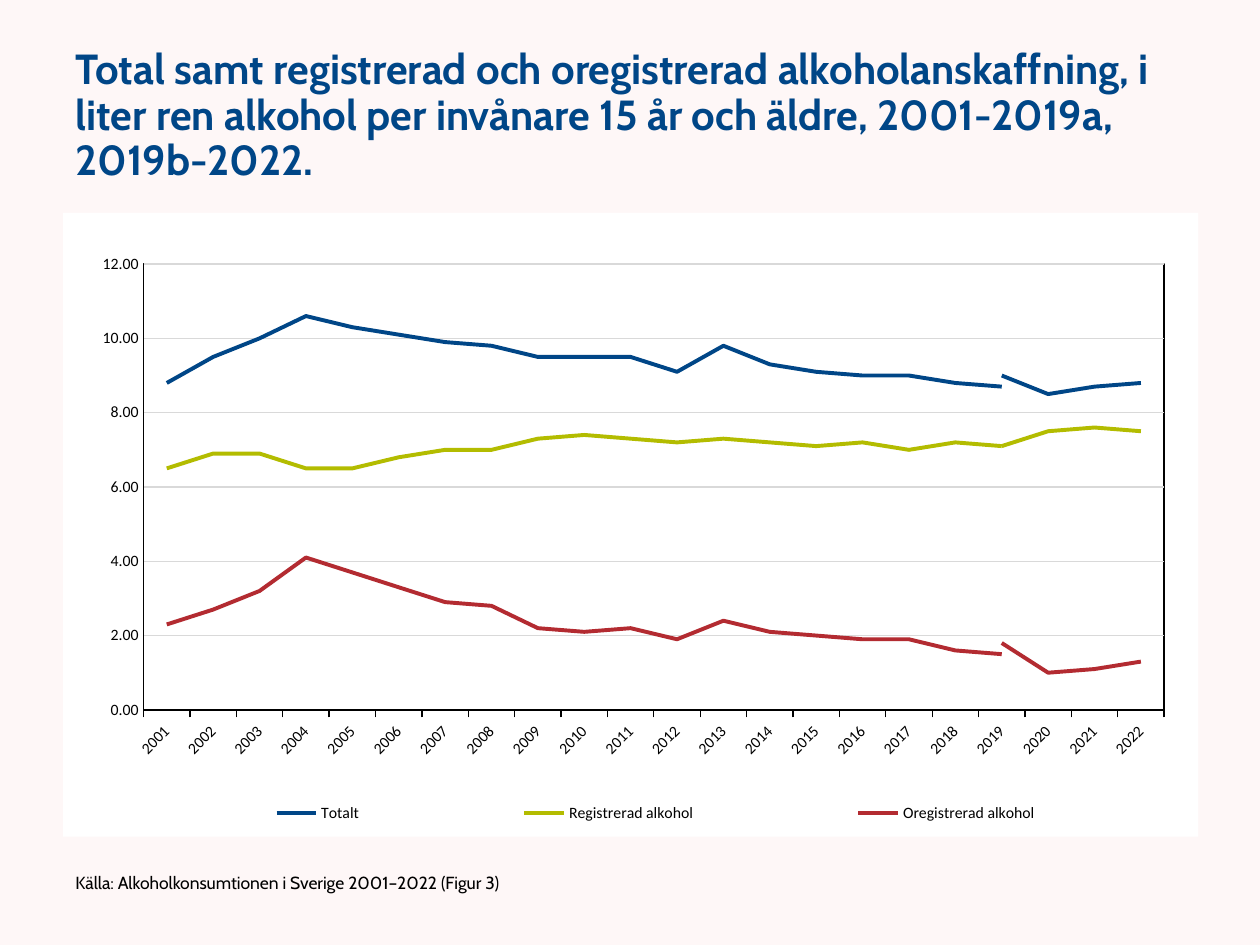
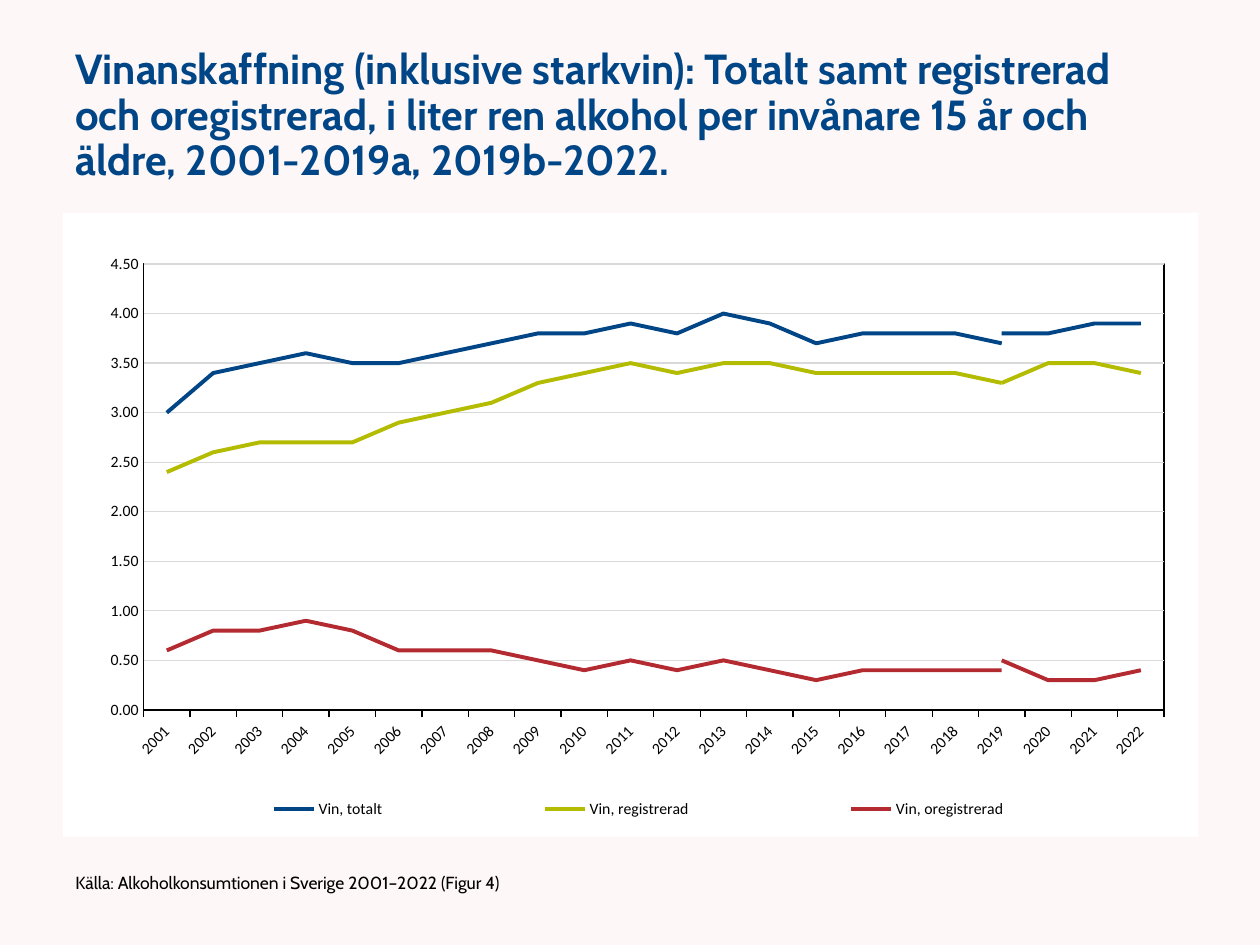
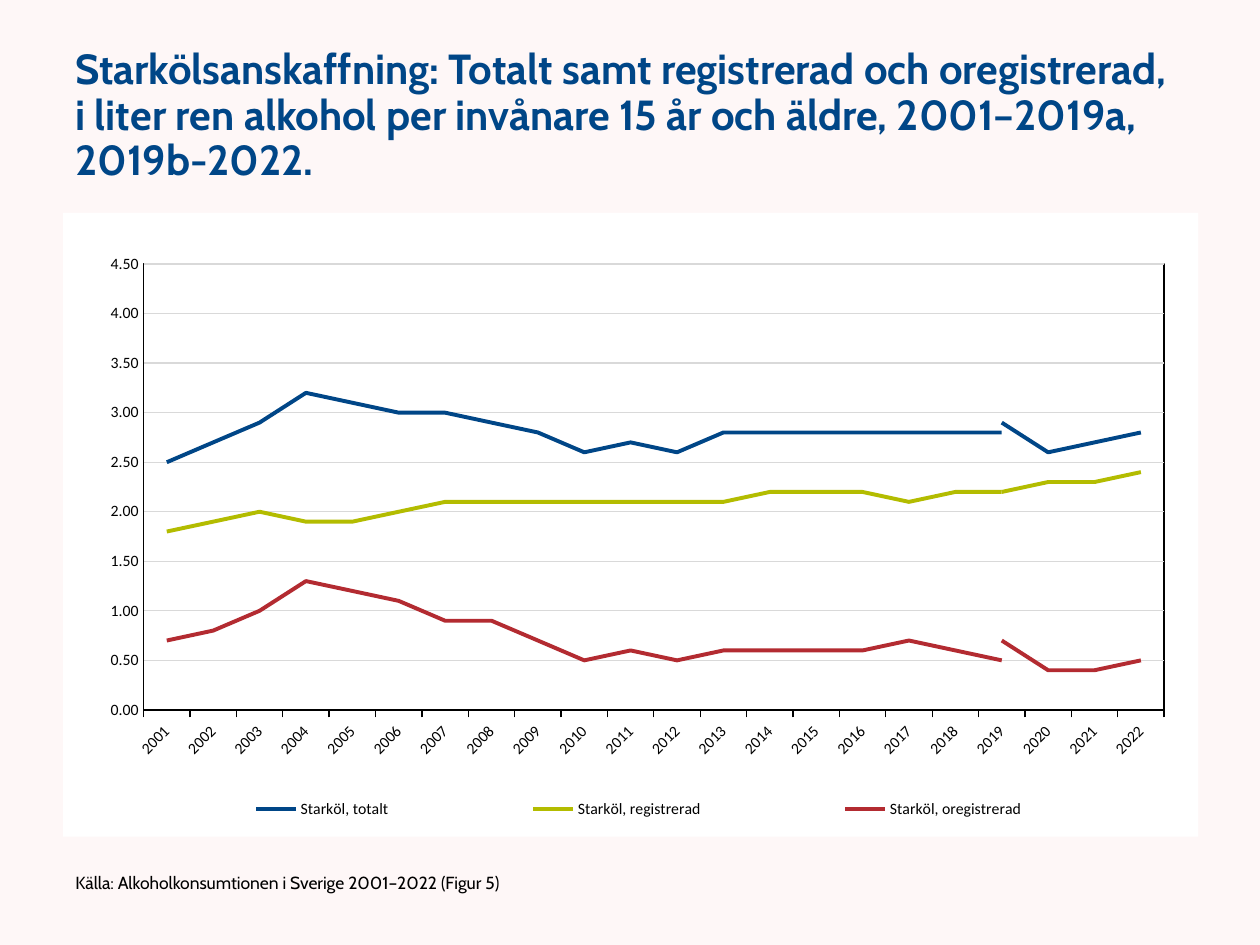
from pptx import Presentation
from pptx.chart.data import CategoryChartData
from pptx.dml.color import RGBColor
from pptx.enum import chart as ch, text
from pptx.oxml import parse_xml
from pptx.oxml.ns import nsdecls, qn
from pptx.util import Pt

# Content: each line holds a name, 2001-2019a and 2019b-2022
YEARS = [str(year) for year in range(2001, 2023)]
BREAK = YEARS.index("2019")
SOURCE = "Källa: Alkoholkonsumtionen i Sverige 2001–2022 (Figur {})"

FIGURES = [
    {
        "title": "Total samt registrerad och oregistrerad alkoholanskaffning, i liter ren "
                 "alkohol per invånare 15 år och äldre, 2001-2019a, 2019b-2022.",
        "figure": 3, "top": 12, "step": 2, "legend": (0.047, 0.925, 0.95, 0.075),
        "lines": [
            ("Totalt",
             [8.8, 9.5, 10, 10.6, 10.3, 10.1, 9.9, 9.8, 9.5, 9.5,
              9.5, 9.1, 9.8, 9.3, 9.1, 9, 9, 8.8, 8.7],
             [9, 8.5, 8.7, 8.8]),
            ("Registrerad alkohol",
             [6.5, 6.9, 6.9, 6.5, 6.5, 6.8, 7, 7, 7.3, 7.4,
              7.3, 7.2, 7.3, 7.2, 7.1, 7.2, 7, 7.2, 7.1],
             [7.1, 7.5, 7.6, 7.5]),
            ("Oregistrerad alkohol",
             [2.3, 2.7, 3.2, 4.1, 3.7, 3.3, 2.9, 2.8, 2.2, 2.1,
              2.2, 1.9, 2.4, 2.1, 2, 1.9, 1.9, 1.6, 1.5],
             [1.8, 1, 1.1, 1.3]),
        ],
    },
    {
        "title": "Vinanskaffning (inklusive starkvin): Totalt samt registrerad och "
                 "oregistrerad, i liter ren alkohol per invånare 15 år och äldre, "
                 "2001-2019a, 2019b-2022.",
        "figure": 4, "top": 4.5, "step": 0.5, "legend": (0.047, 0.918, 0.92, 0.075),
        "lines": [
            ("Vin, totalt",
             [3, 3.4, 3.5, 3.6, 3.5, 3.5, 3.6, 3.7, 3.8, 3.8,
              3.9, 3.8, 4, 3.9, 3.7, 3.8, 3.8, 3.8, 3.7],
             [3.8, 3.8, 3.9, 3.9]),
            ("Vin, registrerad",
             [2.4, 2.6, 2.7, 2.7, 2.7, 2.9, 3, 3.1, 3.3, 3.4,
              3.5, 3.4, 3.5, 3.5, 3.4, 3.4, 3.4, 3.4, 3.3],
             [3.3, 3.5, 3.5, 3.4]),
            ("Vin, oregistrerad",
             [0.6, 0.8, 0.8, 0.9, 0.8, 0.6, 0.6, 0.6, 0.5, 0.4,
              0.5, 0.4, 0.5, 0.4, 0.3, 0.4, 0.4, 0.4, 0.4],
             [0.5, 0.3, 0.3, 0.4]),
        ],
    },
    {
        "title": "Starkölsanskaffning: Totalt samt registrerad och oregistrerad, i liter ren "
                 "alkohol per invånare 15 år och äldre, 2001–2019a, 2019b-2022.",
        "figure": 5, "top": 4.5, "step": 0.5, "legend": (0.047, 0.918, 0.92, 0.075),
        "lines": [
            ("Starköl, totalt",
             [2.5, 2.7, 2.9, 3.2, 3.1, 3, 3, 2.9, 2.8, 2.6,
              2.7, 2.6, 2.8, 2.8, 2.8, 2.8, 2.8, 2.8, 2.8],
             [2.9, 2.6, 2.7, 2.8]),
            ("Starköl, registrerad",
             [1.8, 1.9, 2, 1.9, 1.9, 2, 2.1, 2.1, 2.1, 2.1,
              2.1, 2.1, 2.1, 2.2, 2.2, 2.2, 2.1, 2.2, 2.2],
             [2.2, 2.3, 2.3, 2.4]),
            ("Starköl, oregistrerad",
             [0.7, 0.8, 1, 1.3, 1.2, 1.1, 0.9, 0.9, 0.7, 0.5,
              0.6, 0.5, 0.6, 0.6, 0.6, 0.6, 0.7, 0.6, 0.5],
             [0.7, 0.4, 0.4, 0.5]),
        ],
    },
]

# Shared style, lengths in points
COLORS = {"page": "FEF7F7", "panel": "FFFFFF", "ink": "000000", "grid": "D9D9D9",
          "total": "004687", "registered": "B3BC00", "unregistered": "B32B31"}
LINE_COLORS = ("total", "registered", "unregistered")
TITLE_BOX = (36, 21.6, 648, 90)
CHART_BOX = (36, 121.7, 648.7, 356.4)
SOURCE_BOX = (36, 491.8, 324, 26.6)
PLOT = (0.071, 0.082, 0.899, 0.715)


def rgb(name):
    return RGBColor.from_string(COLORS[name])


def style_font(font, name, size, color="ink", bold=False):
    font.name, font.size, font.bold = name, Pt(size), bold
    font.color.rgb = rgb(color)


def style_line(line, color, width=0.75):
    line.color.rgb = rgb(color)
    line.width = Pt(width)


def add_text(slide, box, words, size, color="ink", bold=False):
    frame = slide.shapes.add_textbox(*map(Pt, box)).text_frame
    frame.word_wrap = True
    frame.vertical_anchor = text.MSO_ANCHOR.MIDDLE
    frame.text = words
    paragraph = frame.paragraphs[0]
    paragraph.line_spacing = 0.9
    style_font(paragraph.runs[0].font, "Cabin", size, color, bold)


def chart_xml(tag, body):
    return parse_xml(f'<c:{tag} {nsdecls("c", "a")}>{body}</c:{tag}>')


def layout_xml(box, target=""):
    modes = "".join(f'<c:{side}Mode val="edge"/>' for side in "xy")
    sizes = "".join(f'<c:{side} val="{value}"/>' for side, value in zip("xywh", box))
    return chart_xml("layout", f"<c:manualLayout>{target}{modes}{sizes}</c:manualLayout>")


def drop_layout(parent):
    for layout in parent.findall(qn("c:layout")):
        parent.remove(layout)


def style_axes(chart, top, step):
    years, litres = chart.category_axis, chart.value_axis
    for axis, tick in ((years, ch.XL_TICK_MARK.OUTSIDE), (litres, ch.XL_TICK_MARK.NONE)):
        axis.major_tick_mark = tick
        axis.minor_tick_mark = ch.XL_TICK_MARK.NONE
        style_font(axis.tick_labels.font, "Calibri", 9)
        style_line(axis.format.line, "ink")
    years.has_major_gridlines = False
    years._element.find(qn("c:txPr")).find(qn("a:bodyPr")).set("rot", "-2700000")
    litres.minimum_scale, litres.maximum_scale, litres.major_unit = 0, top, step
    litres.has_major_gridlines = True
    style_line(litres.major_gridlines.format.line, "grid")
    litres.tick_labels.number_format = "0.00"
    litres.tick_labels.number_format_is_linked = False
    # The lines start on the value axis
    for crossing in chart._chartSpace.iter(qn("c:crossBetween")):
        crossing.set("val", "midCat")


def style_legend(chart, box):
    chart.has_legend = True
    legend = chart.legend
    legend.position = ch.XL_LEGEND_POSITION.BOTTOM
    legend.include_in_layout = False
    style_font(legend.font, "Calibri", 9)
    drop_layout(legend._element)
    # Only the first part of each broken line has an entry
    after = legend._element.find(qn("c:legendPos"))
    hidden = [chart_xml("legendEntry", f'<c:idx val="{i}"/><c:delete val="1"/>')
              for i in range(1, len(chart.plots[0].series), 2)]
    for part in hidden + [layout_xml(box)]:
        after.addnext(part)
        after = part


def style_panel(chart):
    area = chart._chartSpace.chart.plotArea
    drop_layout(area)
    area.insert(0, layout_xml(PLOT, '<c:layoutTarget val="inner"/>'))
    border = f'<a:solidFill><a:srgbClr val="{COLORS["ink"]}"/></a:solidFill>'
    area.append(chart_xml("spPr", f'<a:noFill/><a:ln w="{Pt(0.75)}">{border}</a:ln>'))
    fill = f'<a:solidFill><a:srgbClr val="{COLORS["panel"]}"/></a:solidFill>'
    chart._chartSpace.chart.addnext(
        chart_xml("spPr", f"{fill}<a:ln><a:noFill/></a:ln>"))


def add_line_chart(slide, figure):
    data = CategoryChartData(number_format="0.00")
    data.categories = YEARS
    for i, (name, before, after) in enumerate(figure["lines"]):
        data.add_series(name, before + [None] * (len(YEARS) - len(before)))
        data.add_series(f"Series {2 * i + 2}", [None] * BREAK + after)
    chart = slide.shapes.add_chart(
        ch.XL_CHART_TYPE.LINE, *map(Pt, CHART_BOX), data).chart
    chart.has_title = False
    style_font(chart.font, "Calibri", 10)
    plot = chart.plots[0]
    plot.vary_by_categories = False
    for i, series in enumerate(plot.series):
        series.smooth = False
        style_line(series.format.line, LINE_COLORS[i // 2], 2.25)
    style_axes(chart, figure["top"], figure["step"])
    style_legend(chart, figure["legend"])
    style_panel(chart)


def main():
    deck = Presentation()
    deck.slide_width, deck.slide_height = Pt(720), Pt(540)
    for figure in FIGURES:
        slide = deck.slides.add_slide(deck.slide_layouts[6])
        slide.background.fill.solid()
        slide.background.fill.fore_color.rgb = rgb("page")
        add_text(slide, TITLE_BOX, figure["title"], 24, "total", True)
        add_line_chart(slide, figure)
        add_text(slide, SOURCE_BOX, SOURCE.format(figure["figure"]), 10)
    deck.save("out.pptx")


if __name__ == "__main__":
    main()
